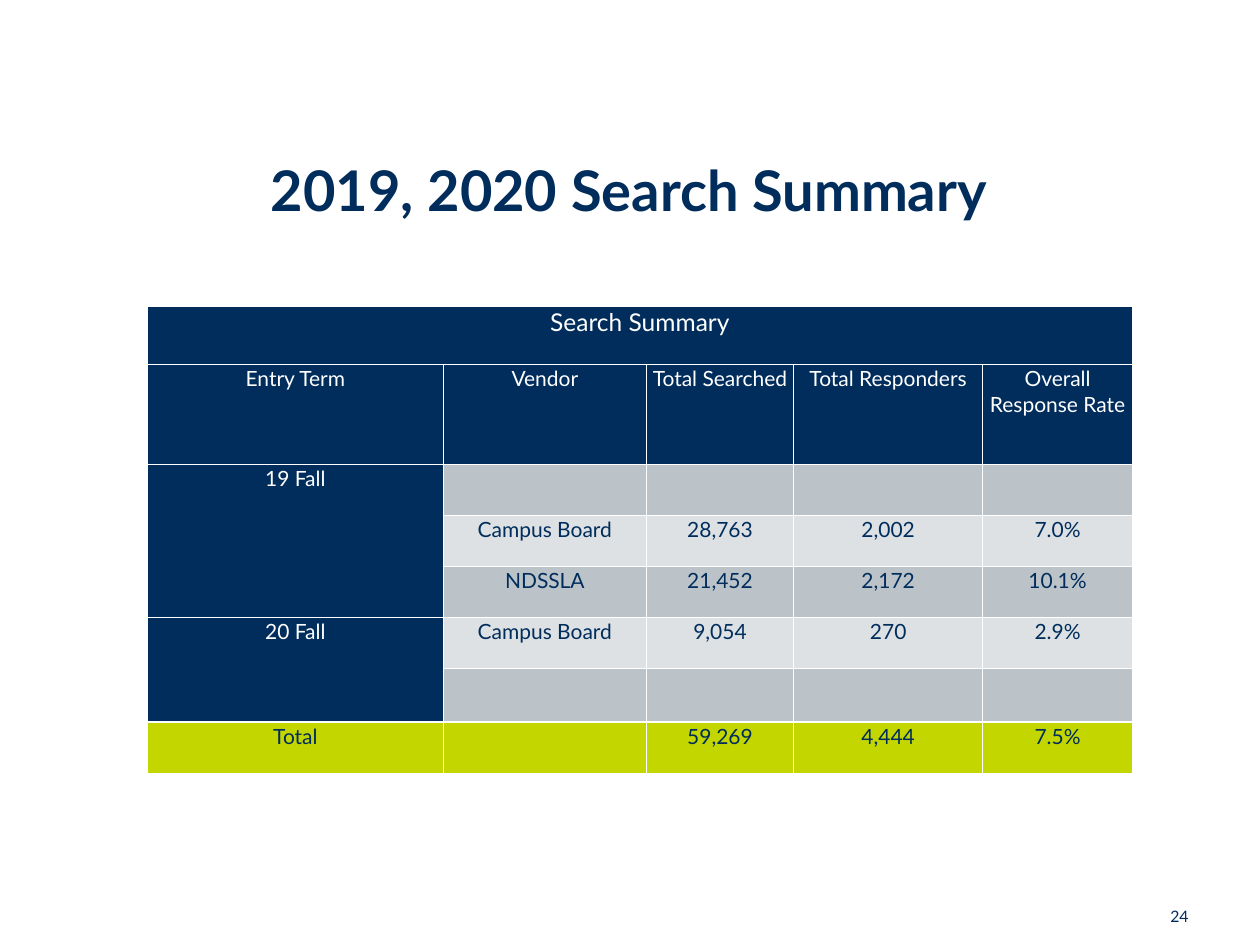
from lxml.etree import SubElement
from pptx import Presentation
from pptx.dml.color import RGBColor as Rgb
from pptx.enum.text import MSO_ANCHOR as Anchor, PP_ALIGN as Align
from pptx.oxml.ns import qn
from pptx.util import Cm, Pt

COLORS = {
    "navy": "002D5C",
    "white": "FFFFFF",
    "gray": "BBC3C8",
    "light": "DDE1E3",
    "lime": "C3D600",
}
COLUMN_WIDTHS = [5.97, 4.09, 2.97, 3.81, 3.02]
ROW_HEIGHTS = [1.18, 2.01, 1.03, 1.03, 1.03, 1.03, 1.08, 1.03]
ROWS = [
    ["\u00a0Search Summary".strip(), "", "", "", ""],
    ["Entry Term", "Vendor", "Total Searched", "Total Responders", "Overall Response Rate"],
    ["19 Fall", "", "", "", ""],
    ["", "Campus Board", "28,763", "2,002", "7.0%"],
    ["", "NDSSLA", "21,452", "2,172", "10.1%"],
    ["20 Fall", "Campus Board", "9,054", "270", "2.9%"],
    ["", "", "", "", ""],
    ["Total", "", "59,269", "4,444", "7.5%"],
]
MERGES = [((0, 0), (0, 4)), ((2, 0), (4, 0)), ((5, 0), (6, 0))]


class SlideBuilder:
    font_name = "Lato"

    def __init__(self, slide):
        self.slide = slide

    def format_text(self, frame, text, size, color, align, bold=False):
        frame.word_wrap = True
        paragraph = frame.paragraphs[0]
        paragraph.text = text
        paragraph.alignment = align
        font = paragraph.font
        font.name, font.size, font.bold = self.font_name, Pt(size), bold
        font.color.rgb = Rgb.from_string(COLORS[color])

    def title(self, text, left, top, width, height):
        shape = self.slide.shapes.title
        shape.left, shape.top, shape.width, shape.height = map(Cm, (left, top, width, height))
        shape.text_frame.vertical_anchor = Anchor.MIDDLE
        self.format_text(shape.text_frame, text, 32, "navy", Align.CENTER, True)

    def page_number(self, text, left, top, width, height):
        shape = self.slide.shapes.add_textbox(*map(Cm, (left, top, width, height)))
        shape.text_frame.vertical_anchor = Anchor.MIDDLE
        self.format_text(shape.text_frame, text, 9, "navy", Align.RIGHT)

    def cell(self, cell, text, size, fill):
        cell.margin_left = cell.margin_right = cell.margin_top = Cm(0.03)
        cell.margin_bottom = 0
        color = "white" if fill == "navy" else "navy"
        self.format_text(cell.text_frame, text, size, color, Align.CENTER)
        properties = cell._tc.get_or_add_tcPr()
        for side in ("a:lnL", "a:lnR", "a:lnT", "a:lnB"):
            line = SubElement(properties, qn(side), w=str(Pt(1)))
            solid = SubElement(line, qn("a:solidFill"))
            SubElement(solid, qn("a:srgbClr"), val=COLORS["white"])
        cell.fill.solid()
        cell.fill.fore_color.rgb = Rgb.from_string(COLORS[fill])

    def table(self, left, top):
        size = Cm(sum(COLUMN_WIDTHS)), Cm(sum(ROW_HEIGHTS))
        frame = self.slide.shapes.add_table(
            len(ROWS), len(COLUMN_WIDTHS), Cm(left), Cm(top), *size)
        table = frame.table
        table.first_row = table.horz_banding = False
        for column, width in zip(table.columns, COLUMN_WIDTHS):
            column.width = Cm(width)
        for row, height in zip(table.rows, ROW_HEIGHTS):
            row.height = Cm(height)
        for row_index, texts in enumerate(ROWS):
            for column_index, text in enumerate(texts):
                if row_index == len(ROWS) - 1:
                    fill = "lime"
                elif row_index < 2 or column_index == 0:
                    fill = "navy"
                else:
                    fill = "light" if row_index % 2 else "gray"
                self.cell(table.cell(row_index, column_index), text,
                          12 if row_index else 14, fill)
        for first, last in MERGES:
            table.cell(*first).merge(table.cell(*last))


def main():
    presentation = Presentation()
    presentation.slide_width, presentation.slide_height = Cm(25.4), Cm(19.05)
    builder = SlideBuilder(presentation.slides.add_slide(presentation.slide_layouts[5]))
    builder.page_number("24", 22, 18.16, 2.21, 0.64)
    builder.title("2019, 2020 Search Summary", 2.54, 2.97, 20.29, 1.7)
    builder.table(2.97, 6.17)
    presentation.save("out.pptx")


if __name__ == "__main__":
    main()
